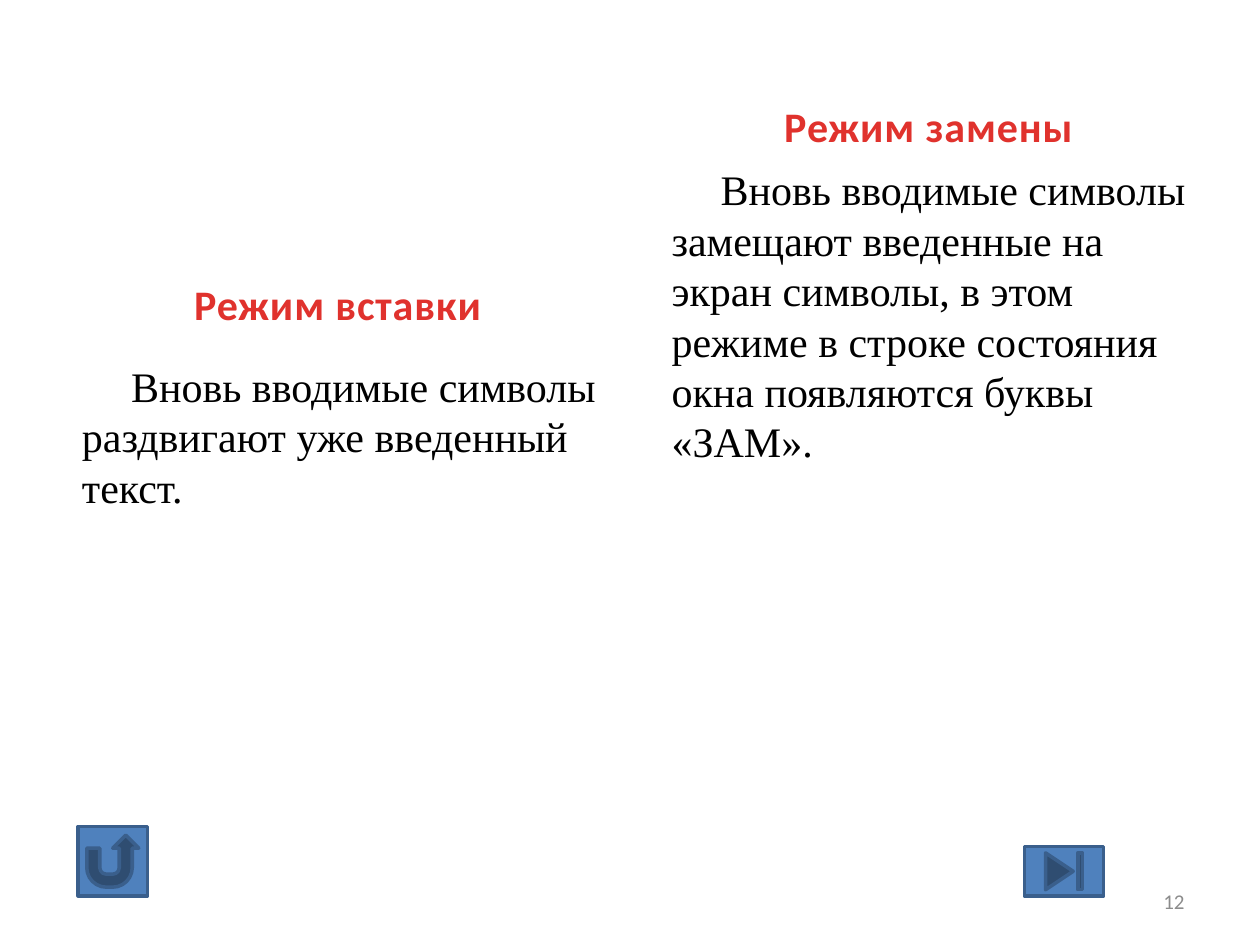
from dataclasses import dataclass

import pptx
import pptx.dml.color
import pptx.enum.shapes
import pptx.enum.text
import pptx.oxml
import pptx.oxml.ns
import pptx.util

Inches = pptx.util.Inches
Pt = pptx.util.Pt
RGB = pptx.dml.color.RGBColor.from_string
SHAPES = pptx.enum.shapes.MSO_SHAPE
ALIGN = pptx.enum.text.PP_ALIGN
ANCHOR = pptx.enum.text.MSO_ANCHOR


@dataclass(frozen=True)
class Theme:
    heading_font: str = "Calibri"
    body_font: str = "Times New Roman"
    heading_stops: tuple = ((0.25, "E0322D"), (1.0, "A2201C"))
    body_color: str = "000000"
    number_color: str = "8C8C8C"
    button_fill: str = "4F81BD"
    button_line: str = "3A5F8C"
    text_size: int = 24
    number_size: int = 12
    letter_spacing: int = 50
    button_line_width: int = 2


THEME = Theme()


def place(part, box):
    part.left, part.top, part.width, part.height = (Inches(v) for v in box)


def fill_text(part, text, box, anchor, align, indent=0):
    place(part, box)
    frame = part.text_frame
    frame.word_wrap = True
    frame.auto_size = pptx.enum.text.MSO_AUTO_SIZE.NONE
    frame.vertical_anchor = anchor
    paragraph = frame.paragraphs[0]
    paragraph.alignment = align
    properties = paragraph._p.get_or_add_pPr()
    properties.set("marL", "0")
    properties.set("indent", str(Inches(indent)))
    properties.append(pptx.oxml.parse_xml(f"<a:buNone {pptx.oxml.ns.nsdecls('a')}/>"))
    run = paragraph.add_run()
    run.text = text
    return run.font


def add_heading(placeholder, text, box):
    font = fill_text(placeholder, text, box, ANCHOR.BOTTOM, ALIGN.CENTER)
    font.name, font.size, font.bold = THEME.heading_font, Pt(THEME.text_size), True
    font.fill.gradient()
    font.fill.gradient_angle = 270
    for stop, (position, color) in zip(font.fill.gradient_stops, THEME.heading_stops):
        stop.position = position
        stop.color.rgb = RGB(color)
    font._element.set("spc", str(THEME.letter_spacing))


def add_description(placeholder, text, box):
    font = fill_text(placeholder, text, box, ANCHOR.TOP, ALIGN.LEFT, indent=0.39)
    font.name, font.size = THEME.body_font, Pt(THEME.text_size)
    font.color.rgb = RGB(THEME.body_color)


def add_mode(slide, first_idx, heading, description, heading_box, description_box):
    placeholders = {p.placeholder_format.idx: p for p in slide.placeholders}
    add_heading(placeholders[first_idx], heading, heading_box)
    add_description(placeholders[first_idx + 1], description, description_box)


def add_page_number(slide, number, box):
    page_number = slide.shapes.add_textbox(*(Inches(v) for v in box))
    font = fill_text(page_number, number, box, ANCHOR.MIDDLE, ALIGN.RIGHT)
    font.name, font.size = THEME.heading_font, Pt(THEME.number_size)
    font.color.rgb = RGB(THEME.number_color)


def add_button(slide, kind, box):
    button = slide.shapes.add_shape(kind, *(Inches(v) for v in box))
    button.shadow.inherit = False
    button.fill.solid()
    button.fill.fore_color.rgb = RGB(THEME.button_fill)
    button.line.color.rgb = RGB(THEME.button_line)
    button.line.width = Pt(THEME.button_line_width)


def main():
    deck = pptx.Presentation()
    deck.slide_width, deck.slide_height = Inches(10), Inches(7.5)
    slide = deck.slides.add_slide(deck.slide_layouts.get_by_name("Comparison"))
    title = slide.shapes.title._element
    title.getparent().remove(title)

    add_mode(
        slide, 1, "Режим вставки",
        "Вновь вводимые символы раздвигают уже введенный текст.",
        (0.47, 2.11, 4.42, 0.55), (0.55, 2.81, 4.42, 1.56),
    )
    add_mode(
        slide, 3, "Режим замены",
        "Вновь вводимые символы замещают введенные на экран символы, "
        "в этом режиме в строке состояния окна появляются буквы «ЗАМ».",
        (5.16, 0.47, 4.42, 0.78), (5.23, 1.25, 4.42, 2.89),
    )
    add_page_number(slide, "12", (7.17, 6.95, 2.33, 0.4))
    add_button(slide, SHAPES.ACTION_BUTTON_RETURN, (0.62, 6.56, 0.55, 0.55))
    add_button(slide, SHAPES.ACTION_BUTTON_END, (8.13, 6.72, 0.63, 0.39))
    deck.save("out.pptx")


if __name__ == "__main__":
    main()
